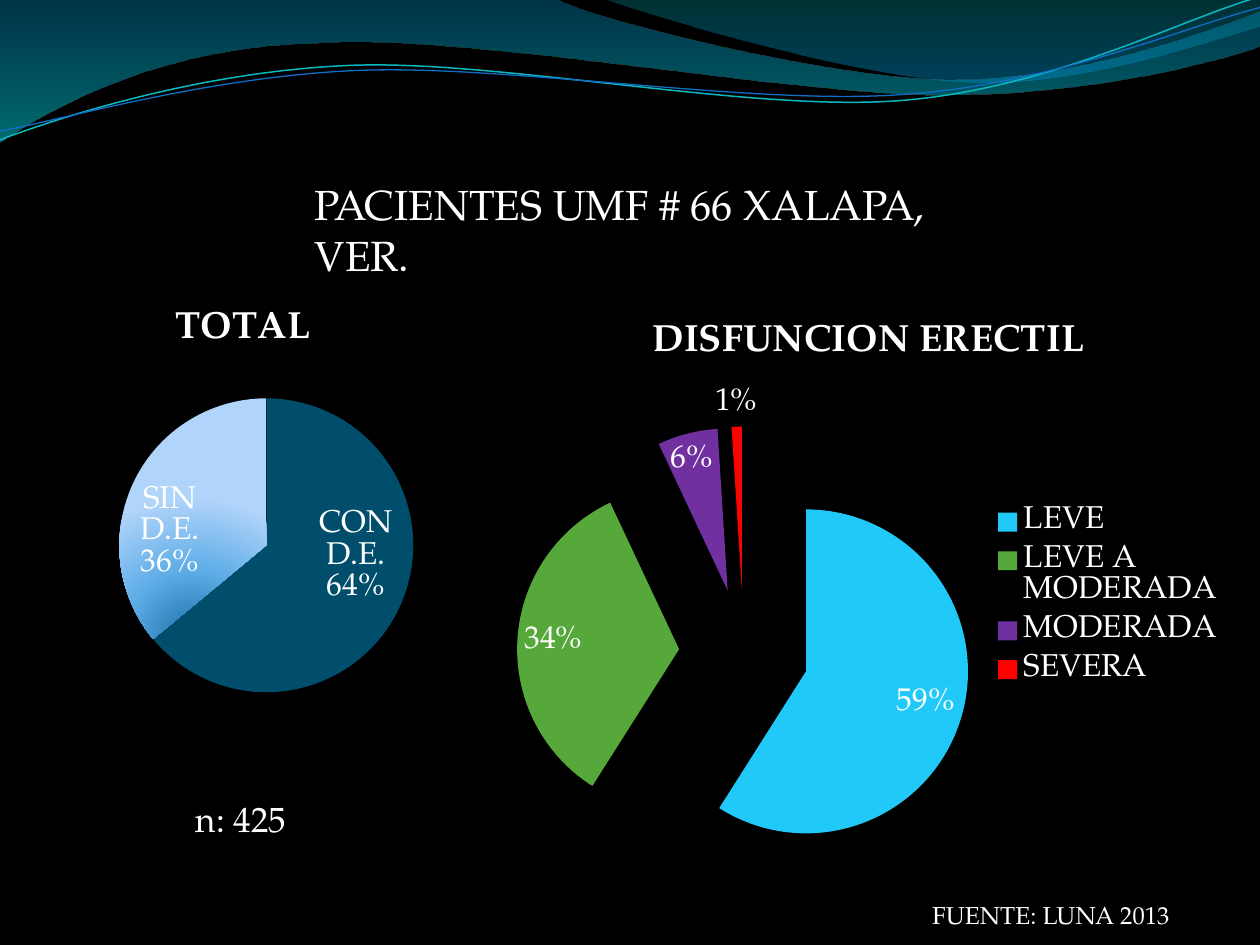
from copy import deepcopy

from lxml import etree
from pptx import Presentation
from pptx.chart.data import CategoryChartData
from pptx.dml.color import RGBColor
from pptx.enum.chart import XL_CHART_TYPE, XL_LABEL_POSITION, XL_LEGEND_POSITION
from pptx.enum.text import MSO_AUTO_SIZE
from pptx.oxml.ns import qn
from pptx.util import Inches, Pt

PIE = XL_CHART_TYPE.PIE
INSIDE_END, OUTSIDE_END = XL_LABEL_POSITION.INSIDE_END, XL_LABEL_POSITION.OUTSIDE_END
RIGHT = XL_LEGEND_POSITION.RIGHT
FIT_SHAPE = MSO_AUTO_SIZE.SHAPE_TO_FIT_TEXT
FONT = "TeX Gyre Pagella"
COLUMNS, ROWS = 100, 75
CELL = Inches(0.1)
COLORS = {
    "background": "000000", "text": "FFFFFF",
    "wave_blue": "0074A1", "wave_aqua": "00C6CF",
    "crest_teal": "00A1A9", "crest_blue": "008BBF",
    "line_aqua": "0AB8BF", "line_blue": "0F6FC6",
    "with": "004E6C", "without_dark": "1A6FA8",
    "without_middle": "60AEE8", "without_light": "B0D4FA",
    "mild": "20C9F8", "mild_moderate": "55A839", "moderate": "7030A0", "severe": "FF0000",
}
WAVE = [
    [(0, 0)], [(44, -0.1)],
    [(47.6, 1.7), (66.4, 6.3), (75.8, 6.3)], [(85.3, 6.3), (95.8, 2.6), (100, 0.9)],
    [(100.1, 3.6)],
    [(98.3, 4.4), (87, 7.6), (74.6, 7.5)], [(62.2, 7.5), (38.2, 2.8), (25.7, 3.4)],
    [(12.9, 3.6), (4.6, 8.3), (-0.1, 11.3)], [(0, 0)],
]
CREST = [
    [(47.9, -0.1)],
    [(50.9, 1.1), (68.2, 6.2), (76.9, 6.5)], [(85.6, 6.9), (96.1, 3.2), (100, 2.1)],
    [(100, 0)], [(47.9, -0.1)],
]
AQUA_LINE = [
    [(0, 11.1)],
    [(4.8, 9.3), (15.8, 5.7), (27.7, 5.2)], [(39.5, 4.7), (59.3, 8.9), (71.3, 8)],
    [(83.3, 7.1), (93.8, 1.5), (99.8, -0.2)],
]
BLUE_LINE = [
    [(0, 10.4)],
    [(4.7, 9.6), (16.4, 6.1), (28.3, 5.6)], [(40.3, 5.1), (59.7, 8.4), (71.7, 7.5)],
    [(83.6, 6.7), (94.1, 2.1), (100, 0.6)],
]


def color(name):
    """Return the named colour."""
    return RGBColor.from_string(COLORS[name])


def cells(*counts):
    """Convert grid cells to lengths."""
    return [int(count * CELL) for count in counts]


def add_outline(slide, segments, close):
    """Add a freeform whose three-point segments are cubic curves."""
    start, *rest = [cells(*point) for segment in segments for point in segment]
    builder = slide.shapes.build_freeform(*start)
    builder.add_line_segments(rest, close=close)
    shape = builder.convert_to_shape()
    shape.shadow.inherit = False
    steps = iter(list(shape.element.iter(qn("a:lnTo"))))
    for segment in segments[1:]:
        first, *others = [next(steps) for _ in segment]
        if others:
            curve = etree.Element(qn("a:cubicBezTo"))
            first.addprevious(curve)
            for step in (first, *others):
                curve.append(step[0])
                step.getparent().remove(step)
    return shape


def set_gradient(fill, stops):
    """Fill from top to bottom with (position, colour name) stops."""
    fill.gradient()
    fill.gradient_angle = 270
    for stop, (position, name) in zip(fill.gradient_stops, stops):
        stop.position = position
        stop.color.rgb = color(name)


def add_wave(slide, segments, stops, opacities):
    """Add a translucent gradient wave."""
    shape = add_outline(slide, segments, True)
    set_gradient(shape.fill, stops)
    shape.line.fill.background()
    for tint, opacity in zip(shape.element.iter(qn("a:srgbClr")), opacities):
        etree.SubElement(tint, qn("a:alpha")).set("val", str(opacity * 1000))


def add_curve(slide, segments, name, width):
    """Add an open curved line."""
    shape = add_outline(slide, segments, False)
    shape.fill.background()
    shape.line.color.rgb = color(name)
    shape.line.width = Pt(width)


def add_text(slide, text, size, *frame):
    """Add a one-paragraph text box."""
    box = slide.shapes.add_textbox(*cells(*frame))
    box.text_frame.word_wrap = True
    box.text_frame.auto_size = FIT_SHAPE
    para = box.text_frame.paragraphs[0]
    para.text = text
    set_font(para.font, size)


def set_font(font, size, bold=False):
    """Set the shared typeface and colour."""
    font.name, font.size, font.bold = FONT, Pt(size), bold
    font.color.rgb = color("text")


def set_layout(parent, inner, **shares):
    """Place a chart part by shares of the chart's size."""
    for old in parent.findall(qn("c:layout")):
        parent.remove(old)
    layout = etree.Element(qn("c:layout"))
    manual = etree.SubElement(layout, qn("c:manualLayout"))
    settings = {"layoutTarget": "inner"} if inner else {}
    settings |= {"xMode": "edge", "yMode": "edge", **shares}
    for tag, value in settings.items():
        etree.SubElement(manual, qn(f"c:{tag}")).set("val", str(value))
    parent.insert(0 if parent.find(qn("c:legendPos")) is None else 1, layout)


def add_pie(slide, title, slices, frame, plot_shares):
    """Add a titled pie from (category, value, colour name) slices."""
    data = CategoryChartData()
    data.categories = [category for category, _, _ in slices]
    data.add_series(title, [value for _, value, _ in slices])
    chart = slide.shapes.add_chart(PIE, *cells(*frame), data).chart
    set_font(chart.font, 18)
    chart.has_title = True
    chart.has_legend = False
    para = chart.chart_title.text_frame.paragraphs[0]
    para.text = title
    set_font(para.font, 21.6, True)
    plot = chart.plots[0]
    plot.vary_by_categories = True
    plot.has_data_labels = True
    labels = plot.data_labels
    labels.show_value, labels.show_percentage = False, True
    labels.number_format, labels.number_format_is_linked = "0%", False
    labels.position = INSIDE_END
    set_font(labels.font, 18)
    for index, (_, _, name) in enumerate(slices):
        fill = plot.series[0].points[index].format.fill
        fill.solid()
        fill.fore_color.rgb = color(name)
    set_layout(chart.element.find(".//" + qn("c:plotArea")), True, **plot_shares)
    return chart


def add_total_pie(slide):
    """Add the pie of all patients."""
    slices = [("CON D.E.", 64, "with"), ("SIN D.E.", 36, "without_light")]
    chart = add_pie(slide, "TOTAL", slices, (-11.4, 22.5, 61.4, 37.8),
                    {"x": 0.34, "y": 0.24, "w": 0.38, "h": 0.62})
    chart.plots[0].data_labels.show_category_name = True
    separator = etree.Element(qn("c:separator"))
    separator.text = "\n"
    chart.element.find(".//" + qn("c:showBubbleSize")).addnext(separator)
    set_gradient(chart.plots[0].series[0].points[1].format.fill,
                 [(0, "without_dark"), (1, "without_light")])
    first = chart.element.find(".//" + qn("a:gs"))
    middle = deepcopy(first)
    middle.set("pos", "50000")
    middle[0].set("val", COLORS["without_middle"])
    first.addnext(middle)
    linear = chart.element.find(".//" + qn("a:lin"))
    radial = etree.Element(qn("a:path"), {"path": "circle"})
    etree.SubElement(radial, qn("a:fillToRect"), {"l": "50000", "t": "100000", "r": "50000"})
    linear.getparent().replace(linear, radial)


def add_severity_pie(slide):
    """Add the exploded pie of severity with its legend."""
    slices = [("LEVE", 59, "mild"), ("LEVE A MODERADA", 34, "mild_moderate"),
              ("MODERADA", 6, "moderate"), ("SEVERA", 1, "severe")]
    chart = add_pie(slide, "DISFUNCION ERECTIL", slices, (39.8, 23.3, 58.3, 48),
                    {"x": 0.02, "y": 0.22, "w": 0.62, "h": 0.75})
    chart.has_legend = True
    chart.legend.position = RIGHT
    chart.legend.include_in_layout = False
    set_font(chart.legend.font, 18)
    set_layout(chart.element.find(".//" + qn("c:legend")), False, x=0.66, y=0.34, w=0.33, h=0.32)
    explosion = etree.Element(qn("c:explosion"), {"val": "40"})
    chart.element.find(".//" + qn("c:dPt")).addprevious(explosion)
    label = chart.plots[0].series[0].points[3].data_label
    set_font(label.font, 18)
    label.position = OUTSIDE_END
    for labels in chart.element.iter(qn("c:dLbls"), qn("c:dLbl")):
        for tag, value in (("showVal", "0"), ("showPercent", "1")):
            for flag in labels.findall(qn(f"c:{tag}")):
                flag.set("val", value)


def main():
    """Build and save the slide."""
    deck = Presentation()
    deck.slide_width, deck.slide_height = cells(COLUMNS, ROWS)
    page = deck.slides.add_slide(deck.slide_layouts[6])
    page.background.fill.solid()
    page.background.fill.fore_color.rgb = color("background")
    add_wave(page, WAVE, [(0, "wave_blue"), (1, "wave_aqua")], (45, 55))
    add_wave(page, CREST, [(0, "crest_teal"), (0.8, "crest_blue")], (30, 45))
    add_curve(page, AQUA_LINE, "line_aqua", 0.85)
    add_curve(page, BLUE_LINE, "line_blue", 0.75)
    add_total_pie(page)
    add_severity_pie(page)
    add_text(page, "PACIENTES UMF # 66 XALAPA, VER.", 24, 24, 13.7, 58.3, 5)
    add_text(page, "n: 425", 20, 14.55, 62.8, 12.6, 4.4)
    add_text(page, "FUENTE: LUNA 2013", 14, 73, 70.95, 24.3, 3.4)
    deck.save("out.pptx")


if __name__ == "__main__":
    main()
